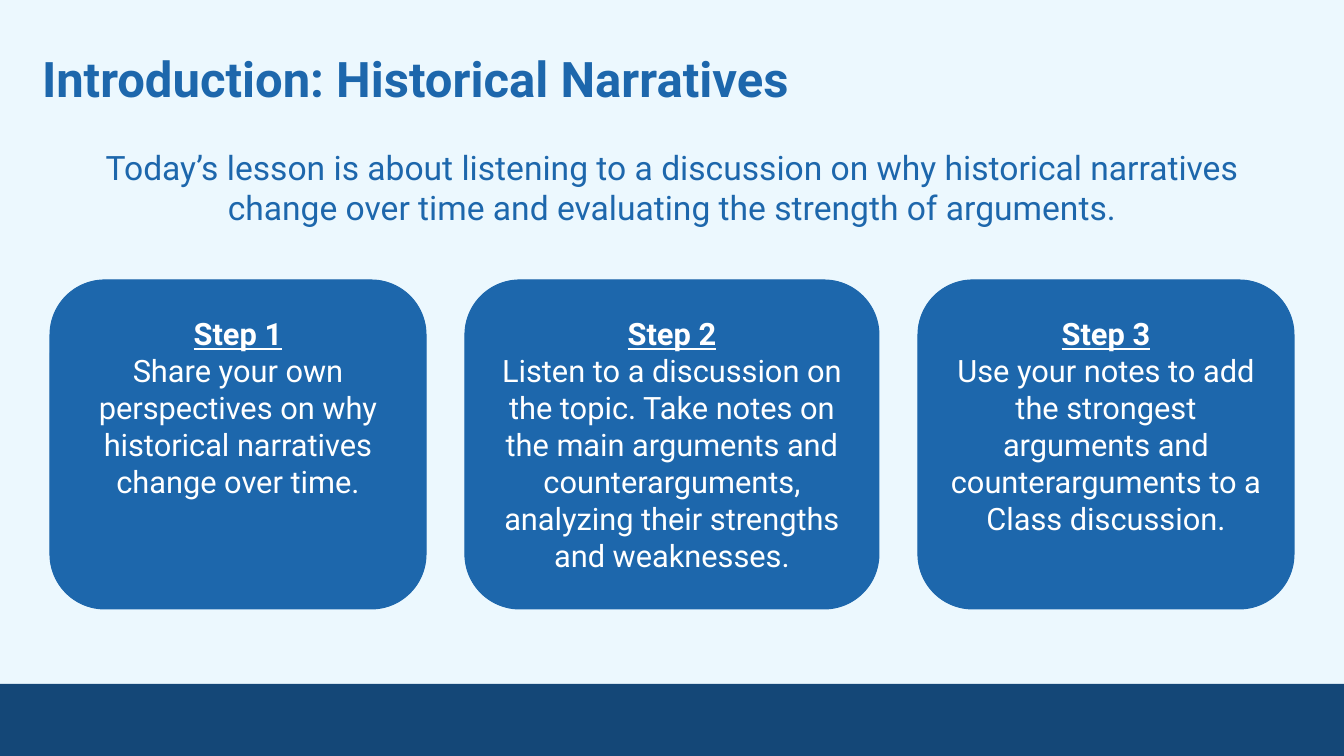
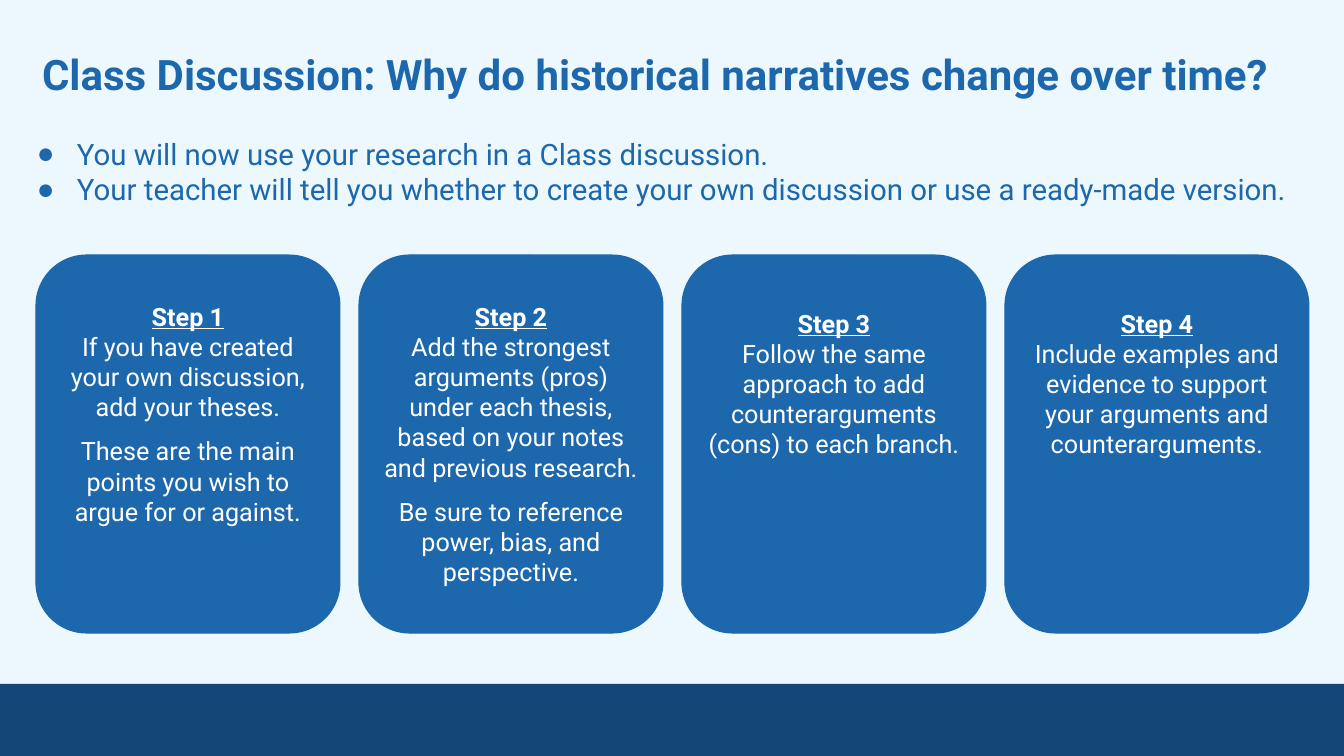
from dataclasses import dataclass

from lxml import etree
from pptx import Presentation
from pptx.dml.color import RGBColor
from pptx.enum.shapes import MSO_SHAPE
from pptx.enum.text import MSO_ANCHOR, MSO_AUTO_SIZE, PP_ALIGN
from pptx.oxml.ns import qn
from pptx.util import Emu, Pt

# Shared look
WIDE, HIGH = 1344, 756
SCALE = 12192000 / WIDE
FONT = "Roboto"
PALE = RGBColor(0xEC, 0xF8, 0xFE)
BLUE = RGBColor(0x1D, 0x67, 0xAC)
NAVY = RGBColor(0x14, 0x47, 0x77)
WHITE = RGBColor(0xFF, 0xFF, 0xFF)
RECT, ROUND = MSO_SHAPE.RECTANGLE, MSO_SHAPE.ROUNDED_RECTANGLE
LEFT, CENTER = PP_ALIGN.LEFT, PP_ALIGN.CENTER
TOP, FIXED = MSO_ANCHOR.TOP, MSO_AUTO_SIZE.NONE


@dataclass(frozen=True)
class Box:
    x: int
    y: int
    w: int
    h: int


@dataclass(frozen=True)
class Card:
    w: int
    pad: int
    lines: tuple[str, ...]


@dataclass(frozen=True)
class Row:
    x: int
    y: int
    h: int
    gap: int
    size: int
    cards: tuple[Card, ...]


@dataclass(frozen=True)
class Page:
    title: str
    size: int
    head: Box
    lead: tuple[str, ...]
    small: int
    body: Box
    listed: bool
    row: Row


PAGES = (
    Page(
        "Introduction: Historical Narratives", 35, Box(29, 35, 1229, 87),
        ("Today’s lesson is about listening to a discussion on why historical "
         "narratives change over time and evaluating the strength of arguments.",),
        24, Box(92, 137, 1160, 120), False,
        Row(50, 280, 329, 39, 22, (
            Card(376, 19, (
                "Step 1",
                "Share your own perspectives on why historical narratives "
                "change over time.")),
            Card(414, 19, (
                "Step 2",
                "Listen to a discussion on the topic. Take notes on the main "
                "arguments and counterarguments, analyzing their strengths "
                "and weaknesses.")),
            Card(376, 19, (
                "Step 3",
                "Use your notes to add the strongest arguments and "
                "counterarguments to a Class discussion.")),
        )),
    ),
    Page(
        "Class Discussion: Why do historical narratives change over time?",
        30, Box(29, 35, 1264, 78),
        ("You will now use your research in a Class discussion.",
         "Your teacher will tell you whether to create your own discussion "
         "or use a ready-made version."),
        21, Box(17, 126, 1300, 92), True,
        Row(36, 255, 378, 19, 18, (
            Card(304, 31, (
                "Step 1",
                "If you have created your own discussion, add your theses.",
                "These are the main points you wish to argue for or against.")),
            Card(304, 31, (
                "Step 2",
                "Add the strongest arguments (pros) under each thesis, based "
                "on your notes and previous research.",
                "Be sure to reference power, bias, and perspective.")),
            Card(304, 38, (
                "Step 3",
                "Follow the same approach to add counterarguments (cons) to "
                "each branch.")),
            Card(304, 38, (
                "Step 4",
                "Include examples and evidence to support your arguments and "
                "counterarguments.")),
        )),
    ),
)


def px(n: int) -> Emu:
    return Emu(round(n * SCALE))


def place(shape, box: Box) -> None:
    shape.left, shape.top = px(box.x), px(box.y)
    shape.width, shape.height = px(box.w), px(box.h)


def write(shape, lines: tuple[str, ...], size: int, color: RGBColor,
          align: PP_ALIGN, pad: int, top: int) -> list:
    """Fill a shape with styled paragraphs and return them."""
    frame = shape.text_frame
    frame.text = "\n".join(lines)
    frame.word_wrap = True
    frame.auto_size = FIXED
    frame.vertical_anchor = TOP
    frame.margin_left = frame.margin_right = frame.margin_bottom = px(pad)
    frame.margin_top = px(top)
    for par in frame.paragraphs:
        par.alignment = align
        par.space_before = Pt(0)
        for run in par.runs:
            run.font.name, run.font.size = FONT, Pt(size)
            run.font.color.rgb = color
    return list(frame.paragraphs)


def bullet(par, shown: bool) -> None:
    """Set or clear the bullet and its indent."""
    props = par._p.get_or_add_pPr()
    props.set("marL", str(px(50) if shown else 0))
    props.set("indent", str(px(-40) if shown else 0))
    if not shown:
        etree.SubElement(props, qn("a:buNone"))
        return
    tint = etree.SubElement(props, qn("a:buClr"))
    etree.SubElement(tint, qn("a:srgbClr")).set("val", str(BLUE))
    etree.SubElement(props, qn("a:buChar")).set("char", "●")


def block(slide, kind: MSO_SHAPE, box: Box, color: RGBColor):
    shape = slide.shapes.add_shape(kind, px(box.x), px(box.y), px(box.w), px(box.h))
    shape.shadow.inherit = False
    shape.fill.solid()
    shape.fill.fore_color.rgb = color
    shape.line.color.rgb = color
    shape.line.width = Pt(0.75)
    return shape


def draw_row(slide, row: Row) -> None:
    x = row.x
    for card in row.cards:
        shape = block(slide, ROUND, Box(x, row.y, card.w, row.h), BLUE)
        step, _, *more = write(shape, card.lines, row.size, WHITE, CENTER, 10, card.pad)
        for run in step.runs:
            run.font.bold = run.font.underline = True
        for par in more:
            par.space_before = Pt(10)
        x += card.w + row.gap


def draw_page(slide, page: Page) -> None:
    # Title
    title = slide.shapes.title
    place(title, page.head)
    head, = write(title, (page.title,), page.size, BLUE, LEFT, 13, 13)
    head.runs[0].font.bold = True

    # Lead text
    body = slide.placeholders[1]
    place(body, page.body)
    align = LEFT if page.listed else CENTER
    for par in write(body, page.lead, page.small, BLUE, align, 10, 10):
        bullet(par, page.listed)

    # Step cards
    draw_row(slide, page.row)


def main() -> None:
    deck = Presentation()
    deck.slide_width, deck.slide_height = px(WIDE), px(HIGH)
    slides = [deck.slides.add_slide(deck.slide_layouts[1]) for _ in PAGES]

    # Background and bottom band live on the master
    master = deck.slide_master
    master.background.fill.solid()
    master.background.fill.fore_color.rgb = PALE
    band = block(slides[0], RECT, Box(-2, 684, 1348, 72), NAVY)
    band.line.fill.background()
    master.shapes.element.insert(2, band.element)

    for slide, page in zip(slides, PAGES):
        draw_page(slide, page)
    deck.save("out.pptx")


if __name__ == "__main__":
    main()
